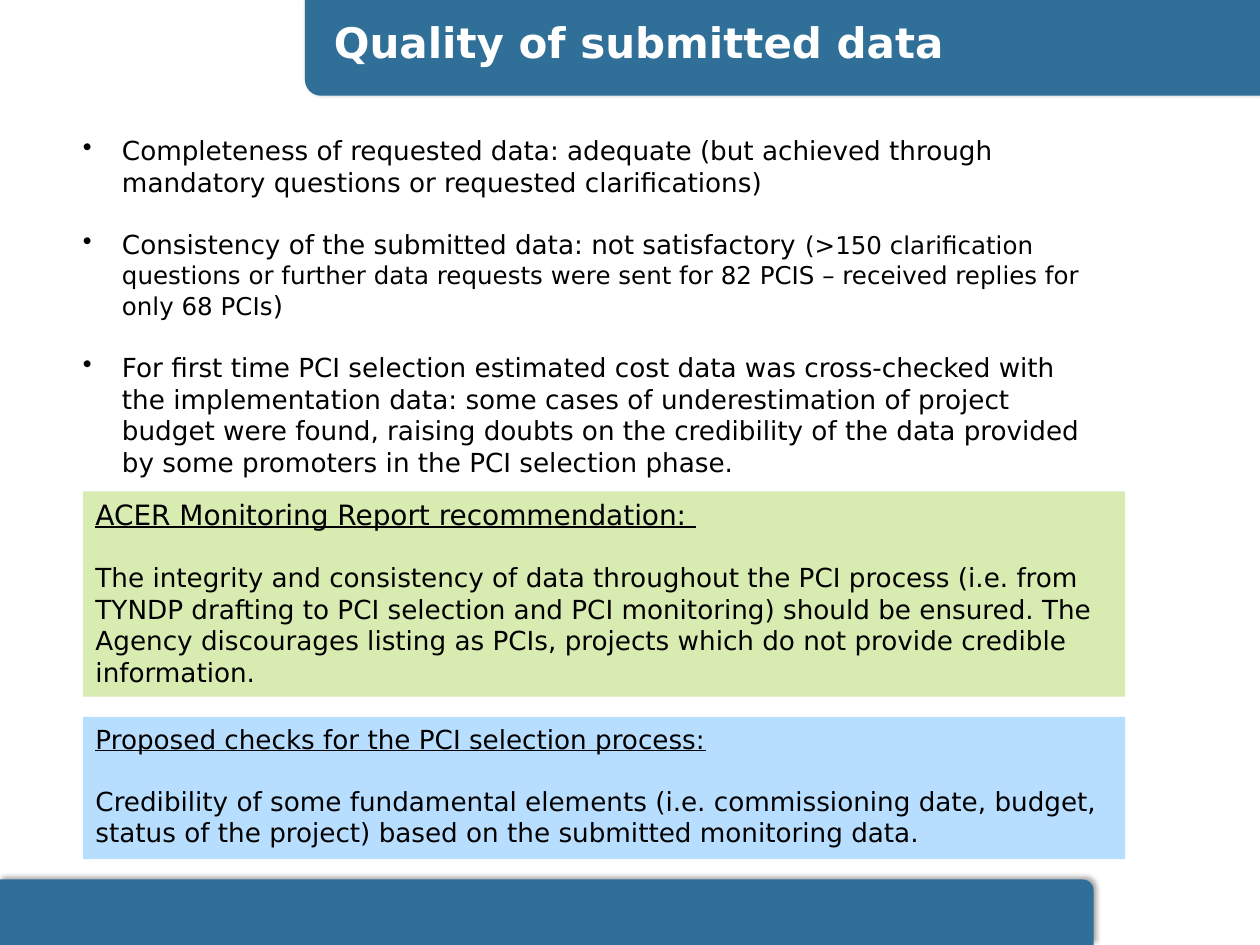
from lxml import etree
from pptx import Presentation
from pptx.dml.color import RGBColor
from pptx.enum.shapes import MSO_SHAPE as Shape
from pptx.enum.text import MSO_ANCHOR as Anchor, PP_ALIGN as Align
from pptx.oxml import parse_xml
from pptx.oxml.ns import nsdecls, qn
from pptx.util import Inches, Pt

# Content: a paragraph is a list of runs (text, size, underlined)
FONT = "DejaVu Sans"
BLUE, GREEN, PALE_BLUE = "307098", "D8EBB1", "B8DEFF"
BLACK, WHITE = "000000", "FFFFFF"
PARAGRAPH_GAP = 17.5

TITLE = "Quality of submitted data"
FINDINGS = [
    [("Completeness of requested data: adequate (but achieved through mandatory "
      "questions or requested clarifications)", 15, False)],
    [("Consistency of the submitted data: not satisfactory ", 15, False),
     ("(>150 clarification questions or further data requests were sent for 82 PCIS "
      "– received replies for only 68 PCIs", 14, False),
     (")", 15, False)],
    [("For first time PCI selection estimated cost data was cross-checked with the "
      "implementation data: some cases of underestimation of project budget were found, "
      "raising doubts on the credibility of the data provided by some promoters in the "
      "PCI selection phase.", 15, False)],
]
# Callouts: top, height, fill, paragraphs
CALLOUTS = [
    (3.9, 1.63, GREEN, [
        [("ACER Monitoring Report recommendation: ", 16, True)],
        [("The integrity and consistency of data throughout the PCI process (i.e. from "
          "TYNDP drafting to PCI selection and PCI monitoring) should be ensured. The "
          "Agency discourages listing as PCIs, projects which do not provide credible "
          "information.", 15, False)],
    ]),
    (5.69, 1.13, PALE_BLUE, [
        [("Proposed checks for the PCI selection process:", 15, True)],
        [("Credibility of some fundamental elements (i.e. commissioning date, budget, "
          "status of the project) based on the submitted monitoring data.", 15, False)],
    ]),
]
# Bars: left, top, width, height, rotation
BARS = [(0, 6.98, 8.68, 0.52, 0), (2.42, 0, 7.58, 0.76, 180)]


def color(value):
    return RGBColor.from_string(value)


def add_run(paragraph, text, size, ink=BLACK, underline=False, bold=False):
    run = paragraph.add_run()
    run.text = text
    font = run.font
    font.name, font.size, font.bold = FONT, Pt(size), bold
    font.underline = underline
    font.color.rgb = color(ink)


def add_bullet(paragraph):
    properties = paragraph._p.get_or_add_pPr()
    properties.set("marL", str(Inches(0.31)))
    properties.set("indent", str(Inches(-0.31)))
    etree.SubElement(properties, qn("a:buChar")).set("char", "•")


def write_paragraphs(frame, paragraphs, bulleted=False):
    frame.word_wrap = True
    frame.vertical_anchor = Anchor.TOP
    for index, runs in enumerate(paragraphs):
        paragraph = frame.add_paragraph() if index else frame.paragraphs[0]
        if bulleted:
            add_bullet(paragraph)
        paragraph.alignment = Align.LEFT
        if index:
            paragraph.space_before = Pt(PARAGRAPH_GAP)
        for text, size, underline in runs:
            add_run(paragraph, text, size, underline=underline)


def add_block(slide, kind, box, fill):
    block = slide.shapes.add_shape(kind, *map(Inches, box))
    block.shadow.inherit = False
    block.fill.solid()
    block.fill.fore_color.rgb = color(fill)
    block.line.fill.background()
    return block


def add_bar_shadow(bar):
    effects = bar._element.spPr.find(qn("a:effectLst"))
    effects.append(parse_xml(
        f'<a:outerShdw {nsdecls("a")} blurRad="{Pt(3.1)}" dist="{Pt(1.8)}" '
        f'dir="{306 * 60000}"><a:srgbClr val="{BLACK}"><a:alpha val="35000"/>'
        '</a:srgbClr></a:outerShdw>'))


def main():
    deck = Presentation()
    deck.slide_width, deck.slide_height = Inches(10), Inches(7.5)
    slide = deck.slides.add_slide(deck.slide_layouts[5])

    # Title
    title = slide.shapes.title
    title.left, title.top, title.width, title.height = map(Inches, (2.55, 0.08, 6.85, 0.5))
    title.text_frame.vertical_anchor = Anchor.MIDDLE
    heading = title.text_frame.paragraphs[0]
    heading.alignment = Align.LEFT
    add_run(heading, TITLE, 24, WHITE, bold=True)

    # Header and footer bars, behind the title
    for *box, rotation in BARS:
        bar = add_block(slide, Shape.ROUND_1_RECTANGLE, box, BLUE)
        bar.rotation = rotation
        add_bar_shadow(bar)
        title._element.addprevious(bar._element)

    # Findings
    findings = slide.shapes.add_textbox(*map(Inches, (0.56, 1.02, 8.19, 2.86)))
    write_paragraphs(findings.text_frame, FINDINGS, bulleted=True)

    # Callouts
    for top, height, fill, paragraphs in CALLOUTS:
        callout = add_block(slide, Shape.RECTANGLE, (0.66, top, 8.27, height), fill)
        write_paragraphs(callout.text_frame, paragraphs)

    deck.save("out.pptx")


if __name__ == "__main__":
    main()
